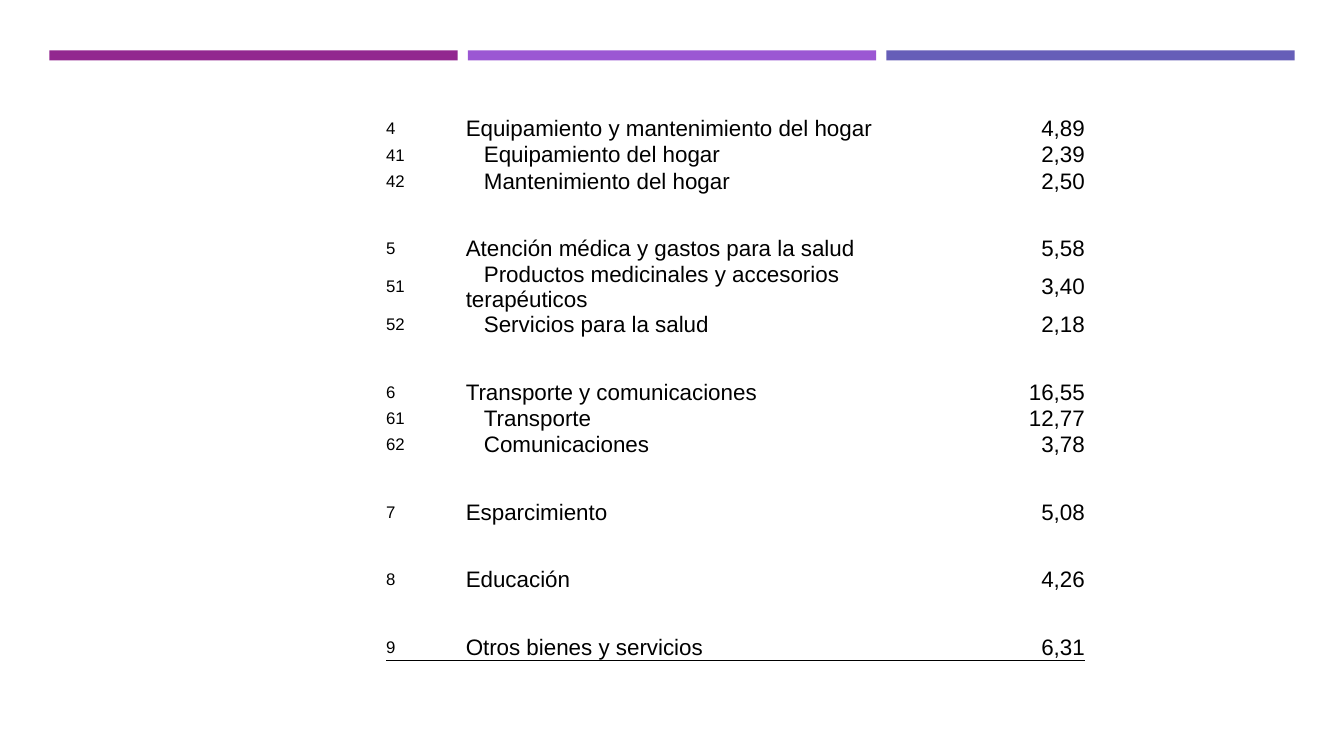
"""Build the slide with the expenditure weights of groups 4 to 9."""
from pptx import Presentation
from pptx.dml.color import RGBColor
from pptx.enum.shapes import MSO_SHAPE as Shape
from pptx.enum.text import MSO_ANCHOR as Anchor, PP_ALIGN as Align
from pptx.oxml import parse_xml
from pptx.oxml.ns import nsdecls, qn
from pptx.util import Inches, Pt


def colour(value):
    return RGBColor.from_string(value)


def write(cell, text, size=16, align=Align.LEFT, indent=0, font="Arial", fill="000000"):
    cell.margin_left = cell.margin_right = cell.margin_top = cell.margin_bottom = 0
    cell.vertical_anchor = Anchor.MIDDLE
    paragraph = cell.text_frame.paragraphs[0]
    paragraph.alignment = align
    if indent:
        paragraph._p.get_or_add_pPr().set("indent", str(Inches(indent)))
    run = paragraph.add_run()
    run.text = text
    run.font.size = Pt(size)
    run.font.name = font
    run.font.color.rgb = colour(fill)


GROUPS = [
    [("4", "Equipamiento y mantenimiento del hogar", "4,89"),
     ("41", "Equipamiento del hogar", "2,39"),
     ("42", "Mantenimiento del hogar", "2,50")],
    [("5", "Atención médica y gastos para la salud", "5,58"),
     ("51", "Productos medicinales y accesorios terapéuticos", "3,40"),
     ("52", "Servicios para la salud", "2,18")],
    [("6", "Transporte y comunicaciones", "16,55"),
     ("61", "Transporte", "12,77"),
     ("62", "Comunicaciones", "3,78")],
    [("7", "Esparcimiento", "5,08")],
    [("8", "Educación", "4,26")],
    [("9", "Otros bienes y servicios", "6,31")],
]
BAR_LEFT, BAR_TOP, BAR_WIDTH, BAR_HEIGHT, BAR_PITCH = 0.49, 0.5, 4.05, 0.1, 4.15
COLUMN_WIDTHS = [0.79, 1, 2.66, 1.14, 1.34]
TEXT_ROW, GAP_ROW = 0.26, 0.41
NO_STYLE = "{2D5ABB26-0587-4C30-8999-92F81FD0307C}"

presentation = Presentation()
presentation.slide_width = Inches(13.33)
presentation.slide_height = Inches(7.5)
slide = presentation.slides.add_slide(presentation.slide_layouts[6])

for column, bar_colour in enumerate(["92278F", "9B57D3", "665EB8"]):
    bar = slide.shapes.add_shape(
        Shape.RECTANGLE, Inches(BAR_LEFT + column * BAR_PITCH), Inches(BAR_TOP),
        Inches(BAR_WIDTH), Inches(BAR_HEIGHT))
    bar.shadow.inherit = False
    bar.fill.solid()
    bar.fill.fore_color.rgb = colour(bar_colour)
    bar.line.fill.background()

rows = []
for group in GROUPS:
    if rows:
        rows.append(None)
    rows.extend(group)
heights = [TEXT_ROW if row else GAP_ROW for row in rows]

frame = slide.shapes.add_table(
    len(rows), len(COLUMN_WIDTHS), Inches(3.83), Inches(1.15),
    Inches(sum(COLUMN_WIDTHS)), Inches(sum(heights)))
table = frame.table
table.first_row = table.horz_banding = False
table._tbl.tblPr.find(qn("a:tableStyleId")).text = NO_STYLE
for column, width in zip(table.columns, COLUMN_WIDTHS):
    column.width = Inches(width)

for index, (row, height) in enumerate(zip(rows, heights)):
    table.rows[index].height = Inches(height)
    table.cell(index, 1).merge(table.cell(index, 3))
    if row:
        code, label, weight = row
        write(table.cell(index, 0), code, size=12)
        write(table.cell(index, 1), label, indent=0.18 if len(code) > 1 else 0)
        write(table.cell(index, 4), weight, align=Align.RIGHT)

for cell in table.rows[len(rows) - 1].cells:
    cell._tc.get_or_add_tcPr().append(parse_xml(
        f'<a:lnB {nsdecls("a")} w="{Pt(0.5)}"><a:solidFill>'
        '<a:srgbClr val="000000"/></a:solidFill></a:lnB>'))
for cell in table.iter_cells():
    cell.fill.background()

presentation.save("out.pptx")
